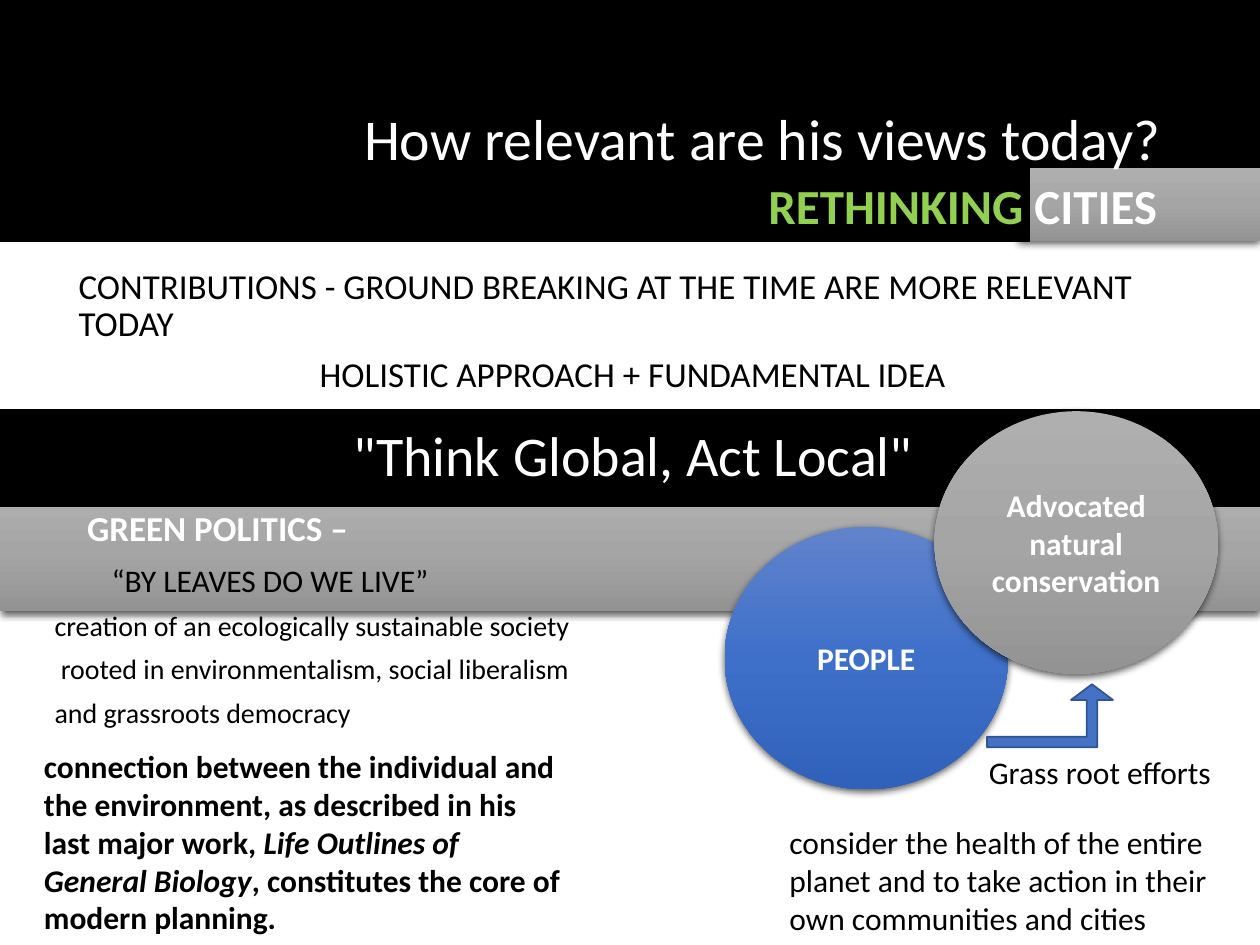
from lxml import etree
from pptx import Presentation
from pptx.dml import color as dml
from pptx.enum import shapes, text
from pptx.oxml import ns
from pptx.util import Pt

COLORS = {
    "black": "000000",
    "white": "FFFFFF",
    "green": "92D050",
    "blue": "4472C4",
    "blue_edge": "325491",
}
GRADIENTS = {
    "gray": ("AFAFAF", "A5A5A5", "939393"),
    "blue": ("6183CB", "3E70CA", "3062BB"),
}
SHAPE = shapes.MSO_SHAPE
ALIGN = text.PP_ALIGN
FIT = text.MSO_AUTO_SIZE


def rgb(name):
    return dml.RGBColor.from_string(COLORS[name])


def add_run(paragraph, words, size, color="black", bold=False, italic=False):
    run = paragraph.add_run()
    run.text = words
    run.font.name = "Calibri"
    run.font.size = Pt(size)
    run.font.bold = bold
    run.font.italic = italic
    run.font.color.rgb = rgb(color)


def place(shape, left, top, width, height):
    shape.left, shape.top = Pt(left), Pt(top)
    shape.width, shape.height = Pt(width), Pt(height)


def add_shape(slide, kind, box, fill, line):
    shape = slide.shapes.add_shape(kind, *(Pt(value) for value in box))
    shape.shadow.inherit = False
    shape.fill.solid()
    shape.fill.fore_color.rgb = rgb(fill)
    shape.line.color.rgb = rgb(line)
    shape.line.width = Pt(1)
    return shape


def add_child(parent, tag, **attributes):
    return etree.SubElement(parent, ns.qn(tag), **attributes)


def add_shaded_shape(slide, kind, box, gradient, label=None):
    shape = slide.shapes.add_shape(kind, *(Pt(value) for value in box))
    shape.shadow.inherit = False
    shape.line.fill.background()
    shape.fill.gradient()
    shape.fill.gradient_angle = 270
    stops = shape.element.find(".//" + ns.qn("a:gsLst"))
    for stop in list(stops):
        stops.remove(stop)
    for position, value in zip((0, 50000, 100000), GRADIENTS[gradient]):
        stop = add_child(stops, "a:gs", pos=str(position))
        add_child(stop, "a:srgbClr", val=value)
    effects = shape.element.find(".//" + ns.qn("a:effectLst"))
    shadow = add_child(effects, "a:outerShdw", blurRad=str(Pt(4.5)), dist=str(Pt(1.5)),
                       dir="5400000", algn="ctr", rotWithShape="0")
    shade = add_child(shadow, "a:srgbClr", val=COLORS["black"])
    add_child(shade, "a:alpha", val="63000")
    if label:
        frame = shape.text_frame
        frame.word_wrap = True
        frame.vertical_anchor = text.MSO_ANCHOR.MIDDLE
        paragraph = frame.paragraphs[0]
        paragraph.alignment = ALIGN.CENTER
        add_run(paragraph, label, 18, "white", bold=True)


def add_text(slide, box, runs, wrap=True, align=ALIGN.LEFT):
    shape = slide.shapes.add_textbox(*(Pt(value) for value in box))
    frame = shape.text_frame
    frame.word_wrap = wrap
    frame.auto_size = FIT.SHAPE_TO_FIT_TEXT
    paragraph = frame.paragraphs[0]
    paragraph.alignment = align
    for run in runs:
        add_run(paragraph, **run)


def bring_to_front(shape):
    shape.element.getparent().append(shape.element)


def fill_title(title):
    bring_to_front(title)
    place(title, 49.5, 29, 621, 104.5)
    frame = title.text_frame
    frame.auto_size = FIT.NONE
    frame.vertical_anchor = text.MSO_ANCHOR.MIDDLE
    paragraph = frame.paragraphs[0]
    paragraph.alignment = ALIGN.RIGHT
    paragraph.line_spacing = 0.9
    add_run(paragraph, "How relevant are his views today?", 33, "white")


def fill_body(body):
    bring_to_front(body)
    place(body, 24, 150, 648, 387)
    frame = body.text_frame
    frame.auto_size = FIT.NONE
    lines = [
        ("CONTRIBUTIONS - GROUND BREAKING AT THE TIME ARE MORE RELEVANT TODAY", 20, 13.7, 0),
        ("HOLISTIC APPROACH + FUNDAMENTAL IDEA", 20, 27, 7.5),
        ("GREEN POLITICS –", 20, 18.5, 66),
        ("“BY LEAVES DO WE LIVE”", 18, 32.5, 9.5),
        ("creation of an ecologically sustainable society", 16, 0, 7.5),
        ("rooted in environmentalism, social liberalism", 16, 3.6, 7.5),
        ("and grassroots democracy", 16, 0, 7.5),
    ]
    for index, (words, size, indent, gap) in enumerate(lines):
        paragraph = frame.add_paragraph() if index else frame.paragraphs[0]
        paragraph.line_spacing = 0.9
        paragraph.space_before = Pt(gap)
        paragraph.alignment = ALIGN.CENTER if words.startswith("HOLISTIC") else ALIGN.LEFT
        heading = words.startswith("GREEN")
        add_run(paragraph, words, size, "white" if heading else "black", bold=heading)
        properties = paragraph._p.get_or_add_pPr()
        properties.set("marL", str(Pt(indent)))
        properties.set("indent", "0")
        add_child(properties, "a:buNone")


def main():
    presentation = Presentation()
    presentation.slide_width, presentation.slide_height = Pt(720), Pt(540)
    slide = presentation.slides.add_slide(presentation.slide_layouts[1])

    add_shape(slide, SHAPE.RECTANGLE, (0, 0, 720, 126), "black", "black")
    add_shaded_shape(slide, SHAPE.RECTANGLE, (0, 283, 720, 66), "gray")
    add_shaded_shape(slide, SHAPE.RECTANGLE, (582, 96, 138, 42), "gray")
    add_shape(slide, SHAPE.RECTANGLE, (0, 96, 588, 42), "black", "black")
    fill_title(slide.shapes.title)
    fill_body(slide.placeholders[1])
    add_text(slide, (432, 96.5, 240, 41), [
        dict(words="RETHINKING ", size=28, color="green", bold=True),
        dict(words="CITIES", size=28, color="white", bold=True),
    ], wrap=False)

    add_shaded_shape(slide, SHAPE.OVAL, (414, 301, 162, 150), "blue", "PEOPLE")
    add_shape(slide, SHAPE.RECTANGLE, (0, 234, 720, 55), "black", "black")
    add_text(slide, (38, 237, 648, 48), [
        dict(words="\"Think Global, Act Local\"", size=32, color="white"),
    ], align=ALIGN.CENTER)
    add_shaded_shape(slide, SHAPE.OVAL, (534, 235, 162, 150), "gray",
                     "Advocated natural conservation")

    arrow = add_shape(slide, SHAPE.BENT_UP_ARROW, (564, 391, 72, 36), "blue", "blue_edge")
    for index, value in enumerate((0.167, 0.333, 0.25)):
        arrow.adjustments[index] = value

    add_text(slide, (558, 427, 142.5, 29),
             [dict(words="Grass root efforts", size=18)], wrap=False)
    add_text(slide, (18, 423.5, 312, 116.5), [
        dict(words="connection between the individual and the environment, "
                   "as described in his last major work, ", size=18, bold=True),
        dict(words="Life Outlines of General Biology", size=18, bold=True, italic=True),
        dict(words=", constitutes the core of modern planning.", size=18, bold=True),
    ])
    add_text(slide, (444, 467, 276, 73), [
        dict(words="consider the health of the entire planet and to take action "
                   "in their own communities and cities", size=18),
    ])
    presentation.save("out.pptx")


if __name__ == "__main__":
    main()
